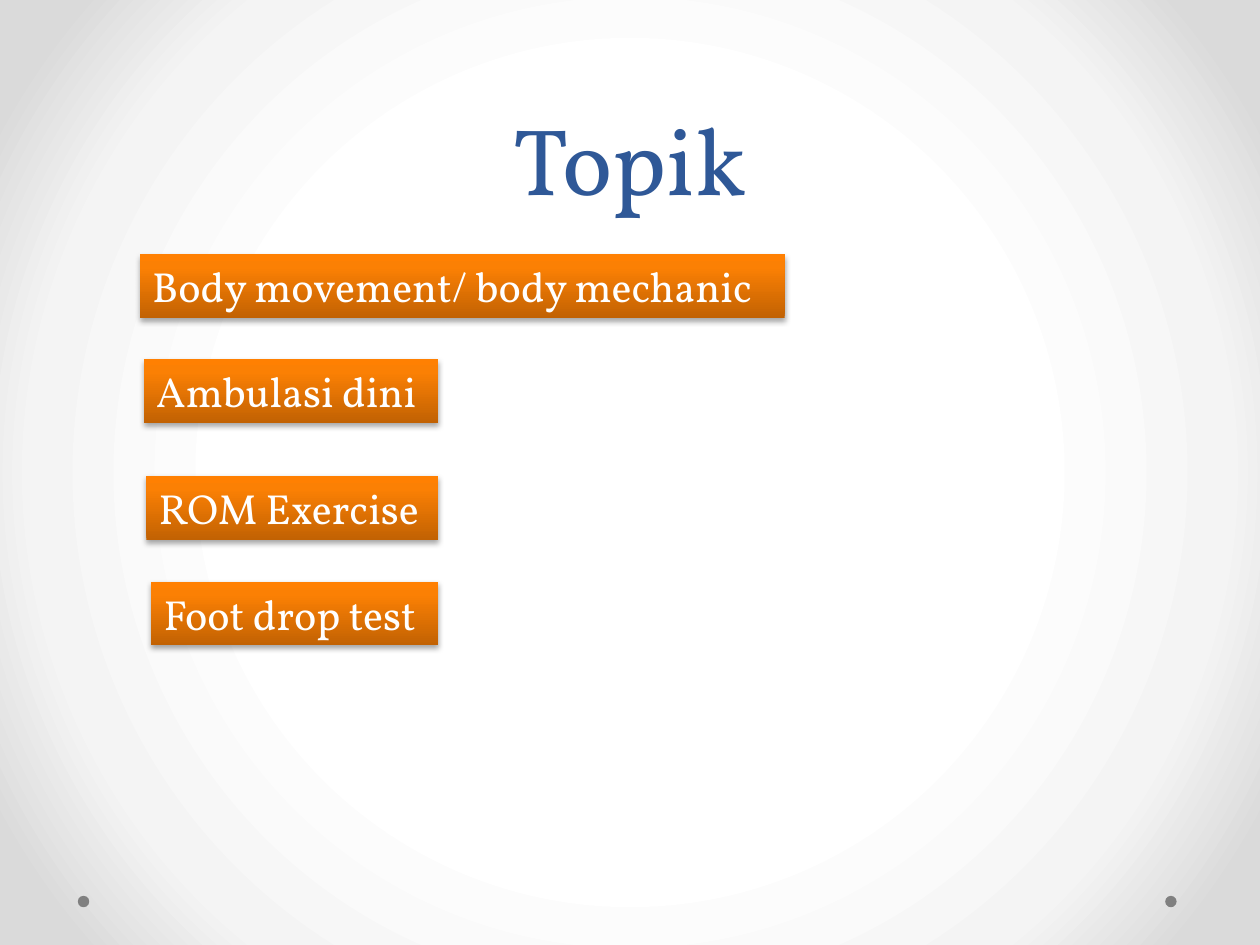
from pptx import Presentation
from pptx.dml.color import RGBColor
from pptx.enum.shapes import MSO_SHAPE
from pptx.enum.text import MSO_ANCHOR, MSO_AUTO_SIZE, PP_ALIGN
from pptx.oxml import parse_xml
from pptx.oxml.ns import nsdecls, qn
from pptx.util import Cm, Pt

RECTANGLE, OVAL = MSO_SHAPE.RECTANGLE, MSO_SHAPE.OVAL
TOP, BOTTOM = MSO_ANCHOR.TOP, MSO_ANCHOR.BOTTOM
LEFT, CENTER = PP_ALIGN.LEFT, PP_ALIGN.CENTER
GROW, NO_FIT = MSO_AUTO_SIZE.SHAPE_TO_FIT_TEXT, MSO_AUTO_SIZE.NONE

FONT = "Vollkorn"
COLORS = {"title": "2F5897", "label": "FFFFFF", "dot": "808080", "shadow": "000000"}
BACKDROP_STOPS = [(50, "FFFFFF"), (76, "F4F4F4"), (92, "DADADA")]
TOPIC_STOPS = [(0, "C26203"), (80, "FB8004"), (100, "FF8002")]
CIRCLE = ('<a:path path="circle"><a:fillToRect l="50000" t="50000" '
          'r="50000" b="50000"/></a:path>')
UPWARD = '<a:lin ang="16200000" scaled="0"/>'

# Topic, left, top and width in cm, within the topic area
TOPICS = [
    ("Body movement/ body mechanic", 0, 0, 13),
    ("Ambulasi dini", 0.08, 2.11, 5.94),
    ("ROM Exercise", 0.13, 4.47, 5.89),
    ("Foot drop test", 0.23, 6.6, 5.79),
]


def gradient_xml(stops, direction):
    marks = "".join(
        f'<a:gs pos="{pos * 1000}"><a:srgbClr val="{color}"/></a:gs>'
        for pos, color in stops)
    return (f'<a:gradFill {nsdecls("a")} rotWithShape="1">'
            f'<a:gsLst>{marks}</a:gsLst>{direction}</a:gradFill>')


def write(paragraph, text, size, color, alignment):
    paragraph.alignment = alignment
    run = paragraph.add_run()
    run.text = text
    run.font.name = FONT
    run.font.size = Pt(size)
    run.font.color.rgb = RGBColor.from_string(COLORS[color])


def add_backdrop(slide, left, top, width):
    """Radial background with a dot at each end of the footer line."""
    backdrop = parse_xml(
        f'<p:bg {nsdecls("p")}><p:bgPr>{gradient_xml(BACKDROP_STOPS, CIRCLE)}'
        f'<a:effectLst {nsdecls("a")}/></p:bgPr></p:bg>')
    slide.element.find(qn("p:cSld")).insert(0, backdrop)
    size = Cm(0.23)
    for dot_left in (left, left + width - size):
        dot = slide.shapes.add_shape(OVAL, dot_left, top, size, size)
        dot.shadow.inherit = False
        dot.fill.solid()
        dot.fill.fore_color.rgb = RGBColor.from_string(COLORS["dot"])
        dot.line.fill.background()


def set_title(slide, left, top, width, height):
    title = slide.shapes.title
    title.left, title.top, title.width, title.height = left, top, width, height
    frame = title.text_frame
    frame.vertical_anchor = BOTTOM
    frame.auto_size = NO_FIT
    heading = frame.paragraphs[0]
    heading.line_spacing = Pt(58)
    write(heading, "Topik", 54, "title", CENTER)


def add_topic(slide, text, left, top, width, height):
    """Orange label with a soft shadow below it."""
    topic = slide.shapes.add_shape(RECTANGLE, left, top, width, height)
    properties = topic.element.spPr
    properties.append(parse_xml(gradient_xml(TOPIC_STOPS, UPWARD)))
    topic.line.fill.background()
    topic.shadow.inherit = False
    properties.find(qn("a:effectLst")).append(parse_xml(
        f'<a:outerShdw {nsdecls("a")} blurRad="{Pt(3.1)}" dist="{Pt(1.8)}" '
        f'dir="5400000" rotWithShape="0"><a:srgbClr val="{COLORS["shadow"]}">'
        '<a:alpha val="35000"/></a:srgbClr></a:outerShdw>'))
    frame = topic.text_frame
    frame.word_wrap = False
    frame.auto_size = GROW
    frame.vertical_anchor = TOP
    write(frame.paragraphs[0], text, 24, "label", LEFT)


def add_topics(slide, left, top):
    for text, dx, dy, width in TOPICS:
        add_topic(slide, text, left + Cm(dx), top + Cm(dy), Cm(width), Cm(1.28))


def main():
    deck = Presentation()
    deck.slide_width, deck.slide_height = Cm(25.4), Cm(19.05)
    title_only = deck.slide_layouts[5]
    slide = deck.slides.add_slide(title_only)
    add_backdrop(slide, Cm(1.57), Cm(18.06), Cm(22.15))
    set_title(slide, Cm(1.27), Cm(0), Cm(22.86), Cm(4.45))
    add_topics(slide, Cm(2.82), Cm(5.13))
    deck.save("out.pptx")


if __name__ == "__main__":
    main()
